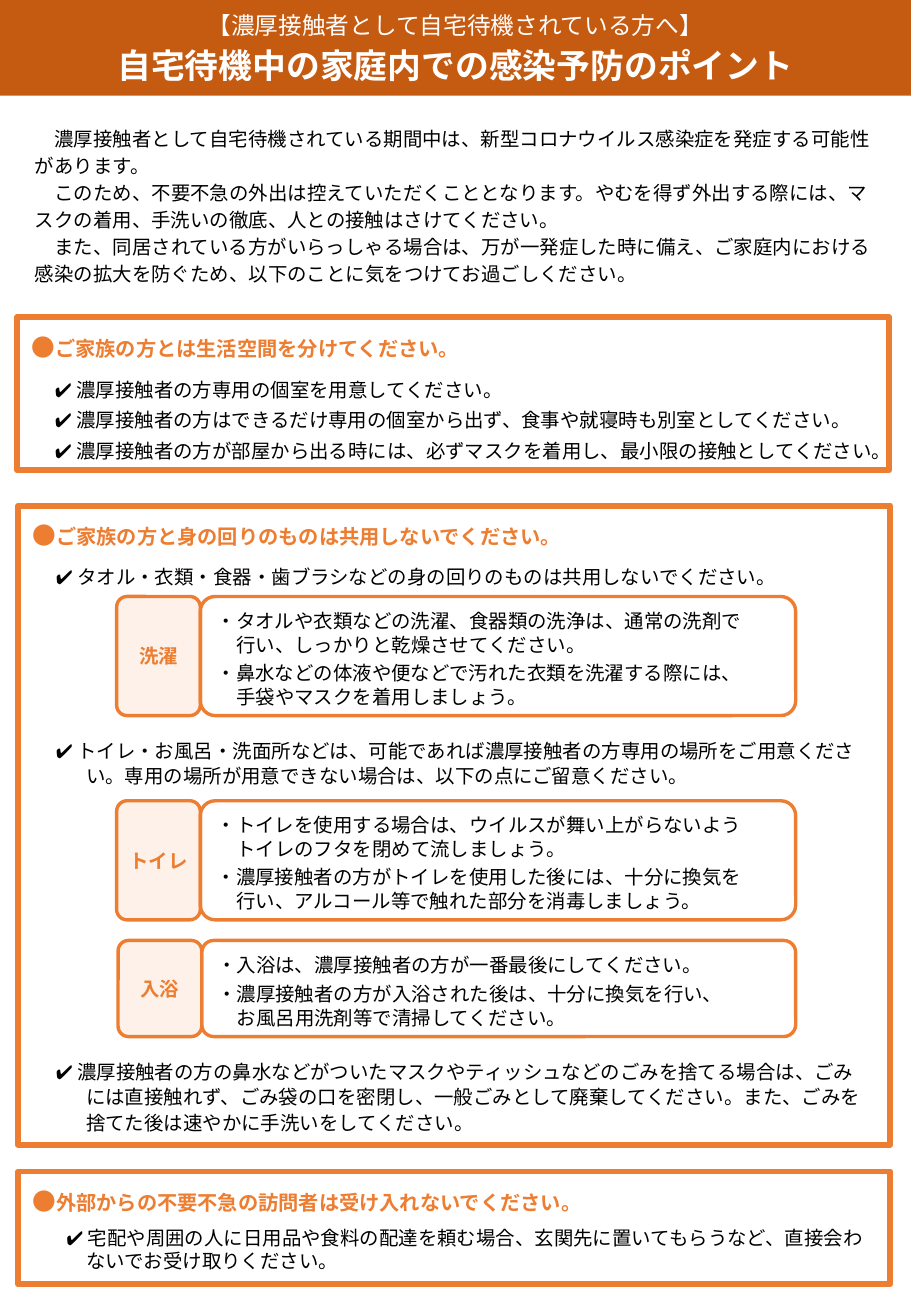
"""Builds a one-page leaflet on preventing infection at home."""
from dataclasses import dataclass

from lxml import etree
from pptx import Presentation
from pptx import util as u
from pptx.dml.color import RGBColor
from pptx.enum import lang, shapes, text
from pptx.oxml.ns import qn

FONT = "Noto Sans CJK JP"
COLORS = {"banner": "C55A11", "accent": "ED7D31", "tint": "FDF1E9",
          "paper": "FFFFFF", "ink": "000000"}
LEFT, CENTER = text.PP_ALIGN.LEFT, text.PP_ALIGN.CENTER
TOP, MIDDLE = text.MSO_ANCHOR.TOP, text.MSO_ANCHOR.MIDDLE


@dataclass(frozen=True)
class Para:
    """A paragraph; spacing in points, margin and indent in centimetres."""
    words: str
    spacing: float = 14
    before: float = 0
    after: float = 0
    margin: float = 0
    indent: float = 0
    size: float = 11.5
    color: str = "ink"
    bold: bool = False
    align: text.PP_ALIGN = LEFT
    lead: str = ""


@dataclass(frozen=True)
class Box:
    """A rectangle with text; lengths in centimetres."""
    left: float
    top: float
    width: float
    height: float
    paras: tuple[Para, ...]
    fill: str = ""
    line: float = 0
    corner: float = 0
    anchor: text.MSO_ANCHOR = TOP
    insets: tuple[float, float, float, float] = (0.2, 0.3, 0, 0.1)


@dataclass(frozen=True)
class Card:
    """A labelled tip card inside a section."""
    label: str
    left: float
    top: float
    height: float
    tips: tuple[str, ...]


def heading(words: str) -> Para:
    """Return a section heading."""
    return Para(words, 17.5, after=6, margin=0.1, size=12, color="accent", bold=True, lead="●")


def check(words: str, spacing: float, before: float = 0, hang: float = 0.63) -> Para:
    """Return a ticked item with a hanging indent."""
    return Para("✔ " + words, spacing, before, margin=1.22, indent=-hang)


def intro(words: str) -> Para:
    """Return an introductory paragraph."""
    return Para(words, 16, indent=0.41)


def section(left: float, top: float, height: float, *paras: Para) -> Box:
    """Return a framed section."""
    return Box(left, top, 18.24, height, paras, "paper", 3.5)


def card_boxes(card: Card) -> list[Box]:
    """Return the label and the tips of a card, side by side."""
    label_width, right = 1.75, 16.64
    body_left = card.left + label_width
    label = Para(card.label, color="accent", bold=True, align=CENTER)
    tips = tuple(Para("・" + tip, before=3 if number else 0, margin=0.41, indent=-0.41)
                 for number, tip in enumerate(card.tips))
    return [Box(card.left, card.top, label_width, card.height, (label,), "tint", 2, 0.125,
                MIDDLE, (0.1, 0.13, 0.1, 0.13)),
            Box(body_left, card.top, right - body_left, card.height, tips, "", 2, 0.125,
                MIDDLE, (0.25, 0.1, 0.25, 0))]


def apply(target: object, values: dict[str, object]) -> None:
    """Set every named attribute on the target."""
    for name, value in values.items():
        setattr(target, name, value)


def add_words(paragraph, words: str, size: float, para: Para) -> None:
    """Add one formatted run."""
    run = paragraph.add_run()
    run.text = words
    apply(run.font, {"size": u.Pt(size), "bold": para.bold, "name": FONT,
                     "language_id": lang.MSO_LANGUAGE_ID.JAPANESE})
    run.font.color.rgb = RGBColor.from_string(COLORS[para.color])
    latin = run.font._element.find(qn("a:latin"))
    east_asian = etree.Element(qn("a:ea"), typeface=FONT)
    latin.addnext(east_asian)


def write(frame, paras: tuple[Para, ...]) -> None:
    """Fill a text frame with paragraphs."""
    for number, para in enumerate(paras):
        paragraph = frame.add_paragraph() if number else frame.paragraphs[0]
        apply(paragraph, {"alignment": para.align, "line_spacing": u.Pt(para.spacing),
                          "space_before": u.Pt(para.before), "space_after": u.Pt(para.after)})
        properties = paragraph._p.get_or_add_pPr()
        properties.set("marL", str(u.Cm(para.margin)))
        properties.set("indent", str(u.Cm(para.indent)))
        if para.lead:
            add_words(paragraph, para.lead, 14, para)
        for row, words in enumerate(para.words.split("\n")):
            if row:
                paragraph.add_line_break()
            add_words(paragraph, words, para.size, para)


def draw(slide, box: Box) -> None:
    """Draw a box, or a bare text box when it has neither fill nor line."""
    place = [u.Cm(n) for n in (box.left, box.top, box.width, box.height)]
    if box.fill or box.line:
        kind = shapes.MSO_SHAPE.ROUNDED_RECTANGLE if box.line else shapes.MSO_SHAPE.RECTANGLE
        panel = slide.shapes.add_shape(kind, *place)
        panel.shadow.inherit = False
        if box.fill:
            panel.fill.solid()
            panel.fill.fore_color.rgb = RGBColor.from_string(COLORS[box.fill])
        else:
            panel.fill.background()
        if box.line:
            panel.adjustments[0] = box.corner
            panel.line.color.rgb = RGBColor.from_string(COLORS["accent"])
            panel.line.width = u.Pt(box.line)
        else:
            panel.line.fill.background()
    else:
        panel = slide.shapes.add_textbox(*place)
    sides = ("margin_left", "margin_top", "margin_right", "margin_bottom")
    apply(panel.text_frame, {"word_wrap": True, "vertical_anchor": box.anchor,
                             **{side: u.Cm(n) for side, n in zip(sides, box.insets)}})
    write(panel.text_frame, box.paras)


BANNER = Box(0, 0, 19.05, 2, (
    Para("【濃厚接触者として自宅待機されている方へ】", size=14, color="paper", align=CENTER),
    Para("自宅待機中の家庭内での感染予防のポイント", 24, 3, size=20, color="paper", bold=True,
         align=CENTER)), "banner", anchor=MIDDLE, insets=(0, 0.1, 0, 0))
INTRO = Box(0.53, 2.49, 17.88, 3.63, (
    intro("濃厚接触者として自宅待機されている期間中は、新型コロナウイルス感染症を発症する可能性があります。"),
    intro("このため、不要不急の外出は控えていただくこととなります。やむを得ず外出する際には、マスクの着用、手洗いの徹底、人との接触はさけてください。"),
    intro("また、同居されている方がいらっしゃる場合は、万が一発症した時に備え、ご家庭内における感染の拡大を防ぐため、以下のことに気をつけてお過ごしください。")),
    insets=(0.2, 0.1, 0.2, 0.1))
LIVING_SPACE = section(
    0.36, 6.63, 3.2,
    heading("ご家族の方とは生活空間を分けてください。"),
    check("濃厚接触者の方専用の個室を用意してください。", 18),
    check("濃厚接触者の方はできるだけ専用の個室から出ず、食事や就寝時も別室としてください。", 18),
    check("濃厚接触者の方が部屋から出る時には、必ずマスクを着用し、最小限の接触としてください。", 18))
BELONGINGS = section(
    0.38, 10.57, 13.36,
    heading("ご家族の方と身の回りのものは共用しないでください。"),
    check("タオル・衣類・食器・歯ブラシなどの身の回りのものは共用しないでください。", 17),
    check("トイレ・お風呂・洗面所などは、可能であれば濃厚接触者の方専用の場所をご用意くださ\n"
          "い。専用の場所が用意できない場合は、以下の点にご留意ください。", 15, 88),
    check("濃厚接触者の方の鼻水などがついたマスクやティッシュなどのごみを捨てる場合は、ごみ\n"
          "には直接触れず、ごみ袋の口を密閉し、一般ごみとして廃棄してください。また、ごみを\n"
          "捨てた後は速やかに手洗いをしてください。", 15, 160.5))
VISITORS = section(
    0.38, 24.49, 2.36,
    heading("外部からの不要不急の訪問者は受け入れないでください。"),
    check("宅配や周囲の人に日用品や食料の配達を頼む場合、玄関先に置いてもらうなど、直接会わ\n"
          "ないでお受け取りください。", 14, hang=0.41))
CARDS = (
    Card("洗濯", 2.44, 12.47, 2.49, (
        "タオルや衣類などの洗濯、食器類の洗浄は、通常の洗剤で\n行い、しっかりと乾燥させてください。",
        "鼻水などの体液や便などで汚れた衣類を洗濯する際には、\n手袋やマスクを着用しましょう。")),
    Card("トイレ", 2.44, 16.74, 2.49, (
        "トイレを使用する場合は、ウイルスが舞い上がらないよう\nトイレのフタを閉めて流しましょう。",
        "濃厚接触者の方がトイレを使用した後には、十分に換気を\n行い、アルコール等で触れた部分を消毒しましょう。")),
    Card("入浴", 2.47, 19.66, 2.01, (
        "入浴は、濃厚接触者の方が一番最後にしてください。",
        "濃厚接触者の方が入浴された後は、十分に換気を行い、\nお風呂用洗剤等で清掃してください。")))


def main() -> None:
    """Build and save the leaflet."""
    leaflet = Presentation()
    apply(leaflet, {"slide_width": u.Cm(19.05), "slide_height": u.Cm(27.51)})
    slide = leaflet.slides.add_slide(leaflet.slide_layouts[6])
    card_parts = [part for card in CARDS for part in card_boxes(card)]
    for box in (BANNER, INTRO, LIVING_SPACE, BELONGINGS, *card_parts, VISITORS):
        draw(slide, box)
    leaflet.save("out.pptx")


if __name__ == "__main__":
    main()
